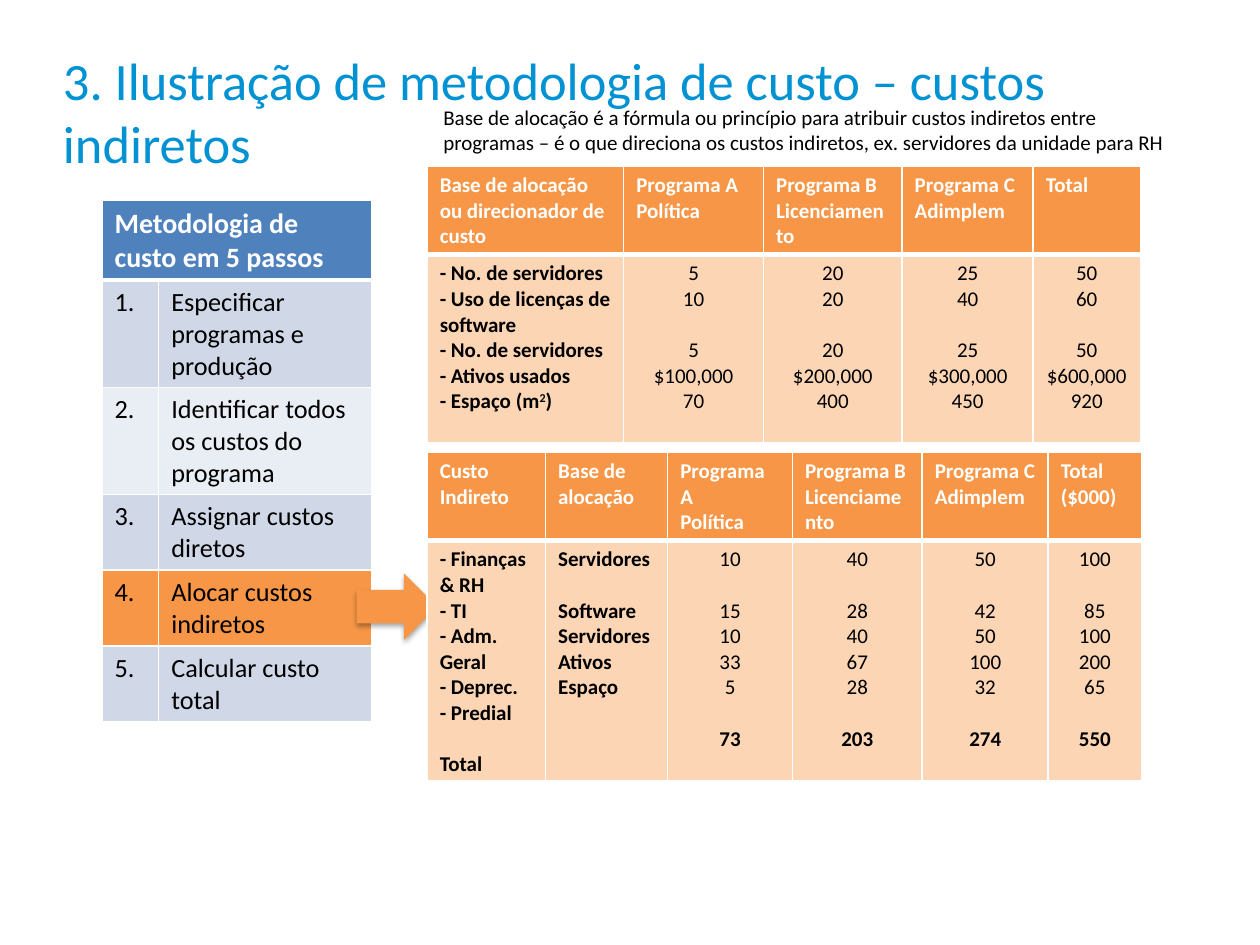
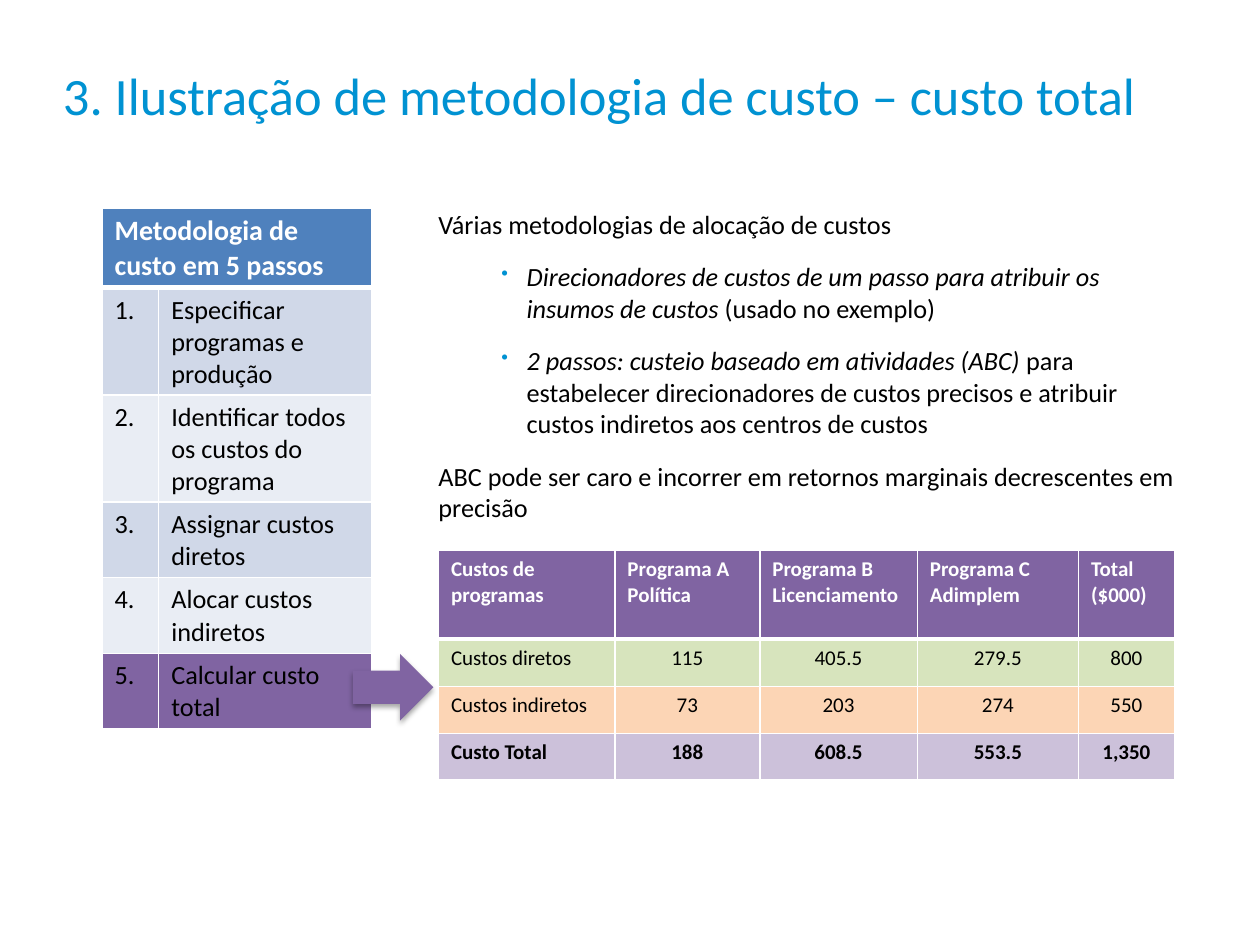
from lxml import etree
from pptx import Presentation
from pptx import util as u
from pptx.dml.color import RGBColor
from pptx.enum import shapes, text
from pptx.oxml import ns

COLORS = {
    "title": "0092D2", "black": "000000", "white": "FFFFFF", "blue": "4F81BD",
    "band": "D0D8E8", "pale_band": "E9EDF4", "orange": "F79646", "peach": "FCD5B5",
    "purple": "8064A2", "lilac": "CCC1DA", "green": "D7E4BD",
}
LINE_HEIGHT = 14.65


def write(frame, lines, size, color="black", bold=False, centered=False):
    frame.word_wrap = True
    gap = 0
    started = False
    for line in lines:
        if line is None:
            gap = LINE_HEIGHT
            continue
        paragraph = frame.add_paragraph() if started else frame.paragraphs[0]
        started = True
        paragraph.text = line
        paragraph.alignment = text.PP_ALIGN.CENTER if centered else text.PP_ALIGN.LEFT
        if gap:
            paragraph.space_before = u.Pt(gap)
            gap = 0
        paragraph.font.size = u.Pt(size)
        paragraph.font.name = "Calibri"
        paragraph.font.bold = bold
        paragraph.font.color.rgb = RGBColor.from_string(COLORS[color])


def add_grid(slide, left, top, widths, heights, rows, fills, sizes=(12, 12),
             bold_columns=0, centered_from=1):
    grid = slide.shapes.add_table(
        len(rows), len(widths), u.Inches(left), u.Inches(top),
        u.Inches(sum(widths)), u.Inches(sum(heights))).table
    grid.horz_banding = False
    for column, width in zip(grid.columns, widths):
        column.width = u.Inches(width)
    for r, (height, cells) in enumerate(zip(heights, rows)):
        grid.rows[r].height = u.Inches(height)
        for c, lines in enumerate(cells):
            cell = grid.cell(r, c)
            header = r == 0
            write(cell.text_frame, lines, sizes[0 if header else 1],
                  "white" if header else "black", header or c < bold_columns,
                  not header and c >= centered_from)
            properties = cell._tc.get_or_add_tcPr()
            for side in "LRTB":
                thick = (r, side) in ((0, "B"), (1, "T"))
                border = etree.SubElement(properties, ns.qn(f"a:ln{side}"),
                                          w=str(u.Pt(3 if thick else 1)))
                paint = etree.SubElement(border, ns.qn("a:solidFill"))
                etree.SubElement(paint, ns.qn("a:srgbClr"), val=COLORS["white"])
            cell.fill.solid()
            cell.fill.fore_color.rgb = RGBColor.from_string(COLORS[fills[r]])
    return grid


deck = Presentation()
deck.slide_width = u.Inches(10)
deck.slide_height = u.Inches(7.5)

steps = ["Especificar programas e produção", "Identificar todos os custos do programa",
         "Assignar custos diretos", "Alocar custos indiretos", "Calcular custo total"]
step_rows = [[["Metodologia de custo em 5 passos"], []]]
step_rows += [[[f"{number}."], [step]] for number, step in enumerate(steps, 1)]

pages = [
    ("custos indiretos", 0.38, 1.01, 1.59, 4, "orange", 2.83, 4.55),
    ("custo total", 0.5, 0.5, 1.65, 5, "purple", 2.8, 5.19),
]
slides = []
for topic, title_top, title_height, steps_top, current, accent, arrow_left, arrow_top in pages:
    slide = deck.slides.add_slide(deck.slide_layouts[6])
    slides.append(slide)
    title = slide.shapes.add_textbox(u.Inches(0.5), u.Inches(title_top),
                                     u.Inches(9), u.Inches(title_height)).text_frame
    title.margin_left = title.margin_right = title.margin_top = title.margin_bottom = 0
    write(title, [f"3. Ilustração de metodologia de custo – {topic}"], 30, "title")

    step_fills = ["blue"] + ["band" if n % 2 else "pale_band" for n in range(1, 6)]
    step_fills[current] = accent
    step_grid = add_grid(slide, 0.81, steps_top, [0.45, 1.69],
                         [0.63, 0.85, 0.85, 0.6, 0.6, 0.6], step_rows, step_fills,
                         sizes=(16, 15), centered_from=2)
    step_grid.cell(0, 0).merge(step_grid.cell(0, 1))

    arrow = slide.shapes.add_shape(shapes.MSO_SHAPE.RIGHT_ARROW, u.Inches(arrow_left),
                                   u.Inches(arrow_top), u.Inches(0.64), u.Inches(0.53))
    arrow.fill.solid()
    arrow.fill.fore_color.rgb = RGBColor.from_string(COLORS[accent])
    arrow.line.fill.background()
    arrow.shadow.inherit = False
    effects = arrow._element.spPr.find(ns.qn("a:effectLst"))
    shadow = etree.SubElement(effects, ns.qn("a:outerShdw"), blurRad=str(u.Pt(3.1)),
                              dist=str(u.Pt(1.8)), dir="5400000", rotWithShape="0")
    shade = etree.SubElement(shadow, ns.qn("a:srgbClr"), val=COLORS["black"])
    etree.SubElement(shade, ns.qn("a:alpha"), val="35000")

indirect, total = slides
programs = [["Programa A", "Política"], ["Programa B", "Licenciamento"],
            ["Programa C", "Adimplem"]]
total_header = ["Total", "($000)"]

driver_rows = [
    [["Base de alocação ou direcionador de custo"], *programs, ["Total"]],
    [["- No. de servidores", "- Uso de licenças de software", "- No. de servidores",
      "- Ativos usados", "- Espaço (m"],
     ["5", "10", None, "5", "$100,000", "70"],
     ["20", "20", None, "20", "$200,000", "400"],
     ["25", "40", None, "25", "$300,000", "450"],
     ["50", "60", None, "50", "$600,000", "920"]],
]
drivers = add_grid(indirect, 3.39, 1.32, [1.56, 1.11, 1.1, 1.04, 0.85], [0.7, 1.49],
                   driver_rows, ["orange", "peach"], bold_columns=1)
area = drivers.cell(1, 0).text_frame.paragraphs[-1]
exponent = area.add_run()
exponent.text = "2"
exponent.font._element.set("baseline", "30000")
area.add_run().text = ")"

cost_rows = [
    [["Custo Indireto"], ["Base de alocação"], *programs, total_header],
    [["- Finanças & RH", "- TI", "- Adm. Geral", "- Deprec.", "- Predial", None, "Total"],
     ["Servidores", None, "Software", "Servidores", "Ativos", "Espaço"],
     ["10", None, "15", "10", "33", "5", None, "73"],
     ["40", None, "28", "40", "67", "28", None, "203"],
     ["50", None, "42", "50", "100", "32", None, "274"],
     ["100", None, "85", "100", "200", "65", None, "550"]],
]
costs = add_grid(indirect, 3.39, 3.59, [0.94, 0.97, 0.99, 1.03, 1, 0.74], [0.7, 1.9],
                 cost_rows, ["orange", "peach"], bold_columns=2, centered_from=2)
for column in range(2, 6):
    costs.cell(1, column).text_frame.paragraphs[-1].font.bold = True

definition = indirect.shapes.add_textbox(u.Inches(3.42), u.Inches(0.78),
                                         u.Inches(5.95), u.Inches(0.5))
write(definition.text_frame, [
    "Base de alocação é a fórmula ou princípio para atribuir custos indiretos entre "
    "programas – é o que direciona os custos indiretos, ex. servidores da unidade para RH"], 12)

summary_rows = [[["Custos de programas"], *programs, total_header]]
summary_rows += [[[value] for value in row] for row in (
    ("Custos diretos", "115", "405.5", "279.5", "800"),
    ("Custos indiretos", "73", "203", "274", "550"),
    ("Custo Total", "188", "608.5", "553.5", "1,350"))]
summary = add_grid(total, 3.48, 4.37, [1.4, 1.15, 1.25, 1.28, 0.76],
                   [0.7, 0.38, 0.37, 0.37], summary_rows,
                   ["purple", "green", "peach", "lilac"])
for column in range(5):
    summary.cell(3, column).text_frame.paragraphs[0].font.bold = True

methods = total.shapes.add_textbox(u.Inches(3.48), u.Inches(1.65),
                                   u.Inches(5.85), u.Inches(2.52)).text_frame
methods.word_wrap = True
methods.margin_left = methods.margin_right = methods.margin_top = methods.margin_bottom = 0
method_lines = [
    ("", "Várias metodologias de alocação de custos"),
    ("Direcionadores de custos de um passo para atribuir os insumos de custos ",
     "(usado no exemplo)"),
    ("2 passos: custeio baseado em atividades (ABC)",
     " para estabelecer direcionadores de custos precisos e atribuir custos indiretos "
     "aos centros de custos"),
    ("", "ABC pode ser caro e incorrer em retornos marginais decrescentes em precisão"),
]
for index, (method, remark) in enumerate(method_lines):
    paragraph = methods.add_paragraph() if index else methods.paragraphs[0]
    paragraph.space_after = u.Pt(12)
    if method:
        paragraph.level = 1
        properties = paragraph._p.get_or_add_pPr()
        properties.set("marL", str(u.Inches(0.7)))
        properties.set("indent", str(u.Inches(-0.2)))
        bullet_color = etree.SubElement(properties, ns.qn("a:buClr"))
        etree.SubElement(bullet_color, ns.qn("a:srgbClr"), val=COLORS["title"])
        etree.SubElement(properties, ns.qn("a:buSzPct"), val="75000")
        etree.SubElement(properties, ns.qn("a:buChar"), char="•")
        emphasis = paragraph.add_run()
        emphasis.text = method
        emphasis.font.italic = True
    paragraph.add_run().text = remark
    paragraph.font.size = u.Pt(15)
    paragraph.font.name = "Calibri"
    paragraph.font.color.rgb = RGBColor.from_string(COLORS["black"])

deck.save("out.pptx")
